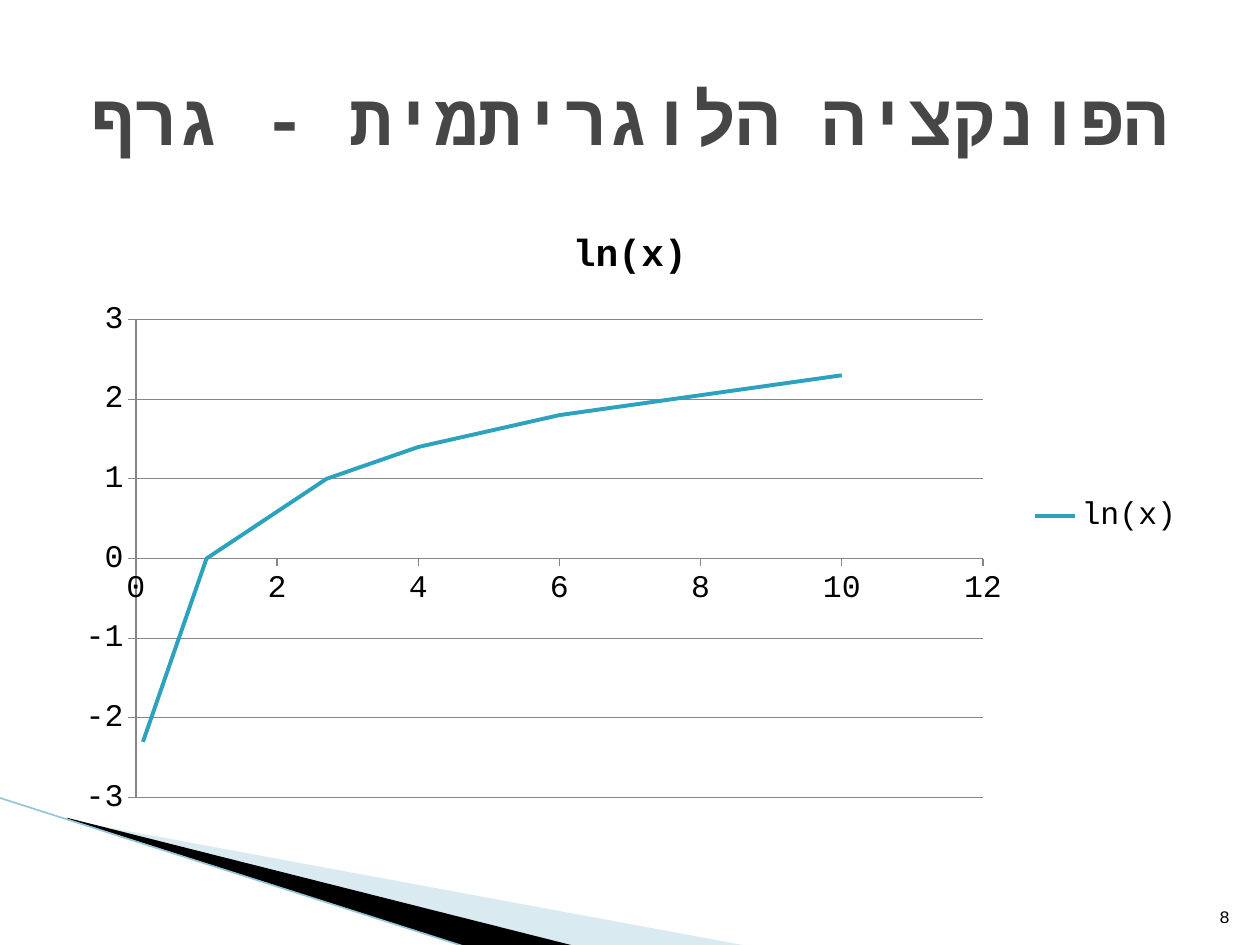
from lxml import etree
from pptx import Presentation
from pptx.chart.data import XyChartData
from pptx.dml.color import RGBColor
from pptx.enum.chart import XL_CHART_TYPE, XL_LEGEND_POSITION, XL_TICK_MARK
from pptx.enum.shapes import MSO_CONNECTOR
from pptx.enum.text import MSO_ANCHOR, PP_ALIGN
from pptx.oxml.ns import qn
from pptx.util import Inches, Pt

BLACK = RGBColor(0x00, 0x00, 0x00)
TITLE_GREY = RGBColor(0x46, 0x46, 0x46)
AXIS_GREY = RGBColor(0x86, 0x86, 0x86)
TEAL = RGBColor(0x2D, 0xA2, 0xBF)
PALE_BLUE = RGBColor(0xA0, 0xCB, 0xDC)
EDGE_BLUE = RGBColor(0x97, 0xC5, 0xD8)
FONT = "Courier New"
COLUMNS, ROWS = 100, 75
TITLE_ONLY = 5
SCATTER = XL_CHART_TYPE.XY_SCATTER_SMOOTH_NO_MARKERS
LEGEND_RIGHT = XL_LEGEND_POSITION.RIGHT
TICK_OUT, TICK_NONE = XL_TICK_MARK.OUTSIDE, XL_TICK_MARK.NONE
STRAIGHT = MSO_CONNECTOR.STRAIGHT
MIDDLE, BOTTOM = MSO_ANCHOR.MIDDLE, MSO_ANCHOR.BOTTOM
CENTER, RIGHT = PP_ALIGN.CENTER, PP_ALIGN.RIGHT


class SlideBuilder:
    """Places styled elements on a grid of COLUMNS by ROWS."""

    def __init__(self, prs):
        self.cell_w = prs.slide_width / COLUMNS
        self.cell_h = prs.slide_height / ROWS
        self.s = prs.slides.add_slide(prs.slide_layouts[TITLE_ONLY])

    def grid(self, *lengths):
        """Turn alternating columns and rows into slide lengths."""
        sizes = (self.cell_w, self.cell_h)
        return [round(n * sizes[i % 2]) for i, n in enumerate(lengths)]

    def style(self, font, size, color=BLACK, bold=False):
        font.name, font.size, font.bold = FONT, Pt(size), bold
        font.color.rgb = color

    def set_text(self, sp, text, size, align, anchor, color=BLACK, bold=False):
        tf = sp.text_frame
        tf.word_wrap = True
        tf.vertical_anchor = anchor
        p = tf.paragraphs[0]
        p.text = text
        p.alignment = align
        self.style(p.runs[0].font, size, color, bold)
        return p

    def title(self, text, box):
        sp = self.s.shapes.title
        sp.left, sp.top, sp.width, sp.height = self.grid(*box)
        p = self.set_text(sp, text, 41, CENTER, MIDDLE, TITLE_GREY, True)
        p._p.get_or_add_pPr().set("rtl", "1")
        rPr = p.runs[0]._r.get_or_add_rPr()
        etree.SubElement(rPr, qn("a:cs")).set("typeface", FONT)

    def label(self, text, box):
        sp = self.s.shapes.add_textbox(*self.grid(*box))
        self.set_text(sp, text, 10, RIGHT, BOTTOM)

    def wedge(self, points, color, opacity=100):
        start, *rest = [self.grid(*point) for point in points]
        builder = self.s.shapes.build_freeform(*start)
        builder.add_line_segments(rest, close=True)
        sp = builder.convert_to_shape()
        sp.shadow.inherit = False
        sp.line.fill.background()
        sp.fill.solid()
        sp.fill.fore_color.rgb = color
        if opacity < 100:
            clr = sp._element.spPr.find(".//" + qn("a:srgbClr"))
            etree.SubElement(clr, qn("a:alpha")).set("val", str(opacity * 1000))

    def line(self, ends, color, width):
        sp = self.s.shapes.add_connector(STRAIGHT, *self.grid(*ends))
        sp.line.color.rgb = color
        sp.line.width = Pt(width)
        etree.SubElement(sp._element.spPr, qn("a:effectLst"))

    def axis(self, axis, low, high, step, gridlines):
        axis.minimum_scale, axis.maximum_scale = low, high
        axis.major_unit = step
        axis.major_tick_mark, axis.minor_tick_mark = TICK_OUT, TICK_NONE
        axis.has_major_gridlines = gridlines
        lines = [axis.format.line]
        if gridlines:
            lines.append(axis.major_gridlines.format.line)
        for line in lines:
            line.color.rgb = AXIS_GREY
            line.width = Pt(0.75)

    def curve_chart(self, name, points, box):
        data = XyChartData()
        series = data.add_series(name)
        for x, y in points:
            series.add_data_point(x, y)
        frame = self.s.shapes.add_chart(SCATTER, *self.grid(*box), data)
        chart = frame.chart
        self.style(chart.font, 18)
        chart.has_title = True
        tf = chart.chart_title.text_frame
        tf.text = name
        self.style(tf.paragraphs[0].runs[0].font, 21.6, bold=True)
        chart.has_legend = True
        chart.legend.position = LEGEND_RIGHT
        chart.legend.include_in_layout = False
        self.axis(chart.category_axis, 0, 12, 2, False)
        self.axis(chart.value_axis, -3, 3, 1, True)
        plot = chart.plots[0]
        plot.vary_by_categories = False
        curve = plot.series[0]
        curve.smooth = True
        curve.format.line.color.rgb = TEAL
        curve.format.line.width = Pt(2.25)


def main():
    prs = Presentation()
    prs.slide_width, prs.slide_height = Inches(10), Inches(7.5)
    slide = SlideBuilder(prs)
    slide.wedge([(5.5, 65.1), (59.5, 75.1), (45.6, 75.1), (5.5, 65)], PALE_BLUE, 40)
    slide.wedge([(5.3, 64.9), (45.7, 75.1), (37.2, 75.2), (5.4, 65)], BLACK)
    slide.line((-0.1, 63.3, 37.1, 75.2), EDGE_BLUE, 0.95)
    points = [(0.1, -2.3), (1, 0), (2.7, 1), (4, 1.4), (6, 1.8), (10, 2.3)]
    slide.curve_chart("ln(x)", points, (5, 16.2, 90, 49.5))
    slide.title("הפונקציה הלוגריתמית - גרף", (5, 3, 90, 12.5))
    slide.label("8", (94.6, 70.1, 4, 4))
    prs.save("out.pptx")


if __name__ == "__main__":
    main()
